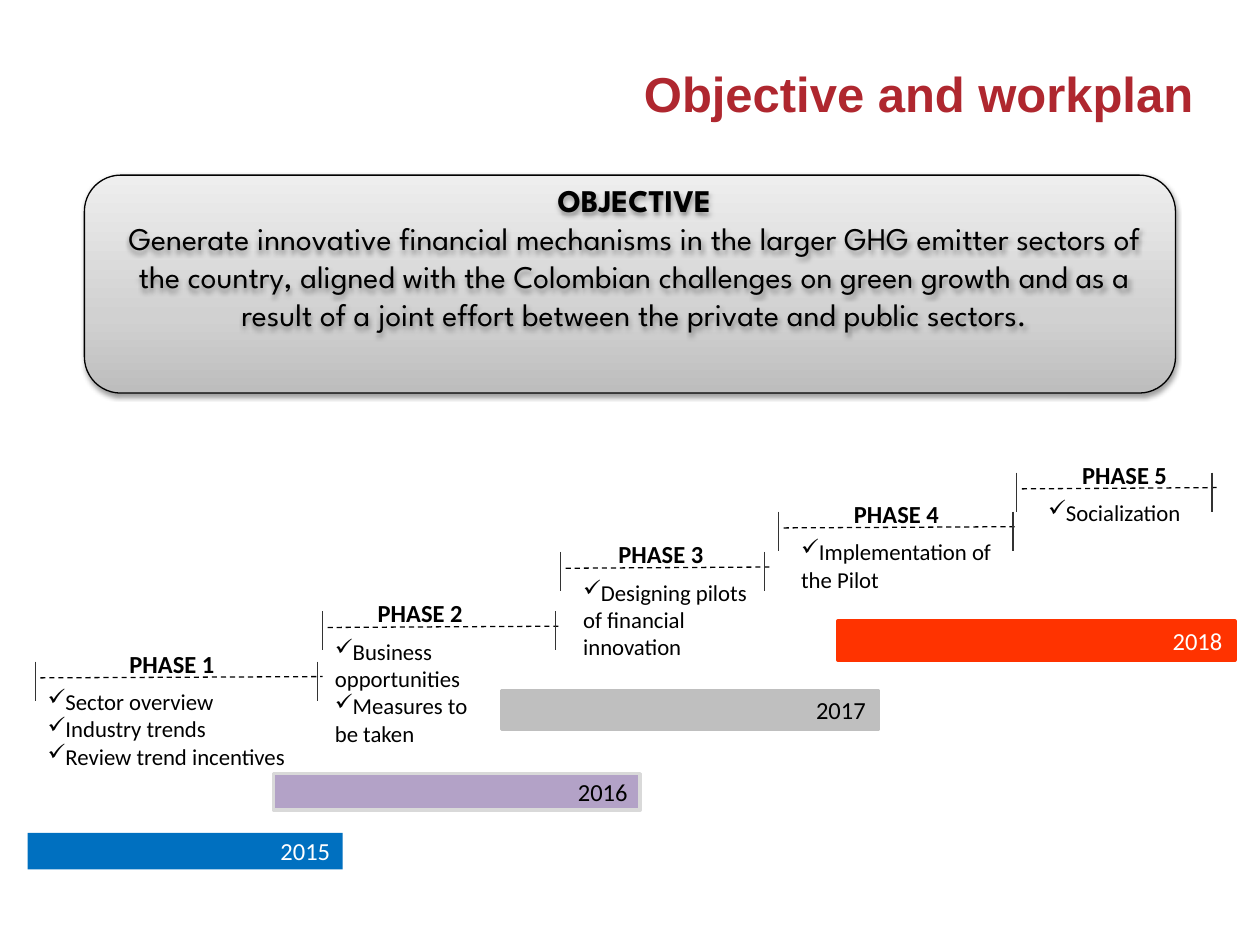
from copy import deepcopy
from typing import NamedTuple, Optional

from lxml import etree
from pptx import Presentation
from pptx.dml.color import RGBColor
from pptx.enum import dml, shapes, text
from pptx.oxml import ns
from pptx.util import Inches, Pt

BLACK = RGBColor(0, 0, 0)
WHITE = RGBColor(0xFF, 0xFF, 0xFF)
TITLE_RED = RGBColor(0xAF, 0x27, 0x2F)
TICK_GRAY = RGBColor(0x33, 0x33, 0x33)
BLUE = RGBColor(0x00, 0x70, 0xC0)
PURPLE = RGBColor(0xB3, 0xA2, 0xC7)
PALE_GRAY = RGBColor(0xD9, 0xD9, 0xD9)
GRAY = RGBColor(0xBF, 0xBF, 0xBF)
ORANGE = RGBColor(0xFF, 0x33, 0x00)
PANEL_STOPS = [
    (0, RGBColor(0xBD, 0xBD, 0xBD)),
    (0.35, RGBColor(0xD1, 0xD1, 0xD1)),
    (1, RGBColor(0xEE, 0xEE, 0xEE)),
]

LEFT, CENTER, RIGHT, JUSTIFY = (
    text.PP_ALIGN.LEFT, text.PP_ALIGN.CENTER, text.PP_ALIGN.RIGHT, text.PP_ALIGN.JUSTIFY)

OBJECTIVE = (
    "Generate innovative financial mechanisms in the larger GHG emitter sectors of "
    "the country, aligned with the Colombian challenges on green growth and as a "
    "result of a joint effort between the private and public sectors."
)


class YearBar(NamedTuple):
    year: str
    left: float
    top: float
    width: float
    height: float
    fill: RGBColor
    line: Optional[RGBColor]
    color: RGBColor


class Phase(NamedTuple):
    """A bracket from left to right, with its label above and its list below."""
    left: float
    right: float
    top: float
    label_left: float
    list_left: float
    list_width: float
    items: list[str]
    align: text.PP_ALIGN = LEFT


BARS = [
    YearBar("2015", 0.22, 6.61, 2.5, 0.29, BLUE, None, WHITE),
    YearBar("2017", 3.98, 5.48, 2.99, 0.31, GRAY, GRAY, BLACK),
    YearBar("2018", 6.65, 4.93, 3.15, 0.31, ORANGE, ORANGE, WHITE),
    YearBar("2016", 2.17, 6.14, 2.91, 0.29, PURPLE, PALE_GRAY, BLACK),
]
PHASES = [
    Phase(0.28, 2.52, 5.25, 0.88, 0.28, 2.12,
          ["Sector overview", "Industry trends", "Review trend incentives"], JUSTIFY),
    Phase(2.56, 4.41, 4.85, 2.85, 2.56, 1.97,
          ["Business opportunities", "Measures to\vbe taken"]),
    Phase(4.45, 6.07, 4.38, 4.76, 4.53, 1.65,
          ["Designing pilots of financial innovation"]),
    Phase(6.18, 8.04, 4.06, 6.63, 6.26, 1.81, ["Implementation of the Pilot"]),
    Phase(8.07, 9.62, 3.75, 8.44, 8.22, 1.31, ["Socialization"]),
]


def set_font(p, name: str, size: float, color: RGBColor, bold: bool = False) -> None:
    p.font.name = name
    p.font.size = Pt(size)
    p.font.bold = bold
    p.font.color.rgb = color


def add_shadow(sp) -> None:
    effects = etree.SubElement(sp._element.spPr, ns.qn("a:effectLst"))
    shadow = etree.SubElement(effects, ns.qn("a:outerShdw"), blurRad=str(Pt(3.1)),
                              dist=str(Pt(1.6)), dir="5400000", rotWithShape="0")
    color = etree.SubElement(shadow, ns.qn("a:srgbClr"), val="000000")
    etree.SubElement(color, ns.qn("a:alpha"), val="38000")


def add_text(parent, left: float, top: float, width: float, height: float,
             lines: list[str], align: text.PP_ALIGN, font: str, size: float,
             bold: bool = False, bullet: str = ""):
    sp = parent.add_textbox(Inches(left), Inches(top), Inches(width), Inches(height))
    tf = sp.text_frame
    tf.word_wrap = True
    for i, line in enumerate(lines):
        p = tf.add_paragraph() if i else tf.paragraphs[0]
        p.text = line
        p.alignment = align
        if bullet:
            etree.SubElement(p._p.get_or_add_pPr(), ns.qn("a:buChar"), char=bullet)
        set_font(p, font, size, BLACK, bold)
    return sp


def add_line(parent, x1: float, y1: float, x2: float, y2: float,
             color: RGBColor, dashed: bool = False) -> None:
    line = parent.add_connector(shapes.MSO_CONNECTOR.STRAIGHT,
                                Inches(x1), Inches(y1), Inches(x2), Inches(y2))
    line.line.width = Pt(0.75)
    line.line.color.rgb = color
    if dashed:
        line.line.dash_style = dml.MSO_LINE.DASH
    etree.SubElement(line._element.spPr, ns.qn("a:effectLst"))


def add_title(slide) -> None:
    title = slide.shapes.title
    title.left, title.top, title.width, title.height = map(Inches, (3.22, 0.45, 6.35, 0.57))
    tf = title.text_frame
    tf.vertical_anchor = text.MSO_ANCHOR.MIDDLE
    p = tf.paragraphs[0]
    p.text = "Objective and workplan"
    p.alignment = RIGHT
    set_font(p, "Arial", 28, TITLE_RED, bold=True)


def add_objective(slide) -> None:
    group = slide.shapes.add_group_shape().shapes
    panel = group.add_shape(shapes.MSO_SHAPE.ROUNDED_RECTANGLE,
                            Inches(0.67), Inches(1.39), Inches(8.66), Inches(1.73))
    panel.fill.gradient()
    panel.fill.gradient_angle = 90
    first = panel._element.spPr.find(".//" + ns.qn("a:gs"))
    first.addnext(deepcopy(first))
    for stop, (position, color) in zip(panel.fill.gradient_stops, PANEL_STOPS):
        stop.position = position
        stop.color.rgb = color
    panel.line.color.rgb = BLACK
    panel.line.width = Pt(0.75)
    add_shadow(panel)

    box = add_text(group, 0.89, 1.39, 8.29, 1.62, ["OBJECTIVE", OBJECTIVE],
                   CENTER, "League Spartan", 18)
    box.text_frame.paragraphs[0].font.bold = True
    add_shadow(box)


def add_year_bar(slide, bar: YearBar) -> None:
    sp = slide.shapes.add_shape(shapes.MSO_SHAPE.RECTANGLE, Inches(bar.left),
                                Inches(bar.top), Inches(bar.width), Inches(bar.height))
    sp.shadow.inherit = False
    sp.fill.solid()
    sp.fill.fore_color.rgb = bar.fill
    if bar.line is None:
        sp.line.fill.background()
    else:
        sp.line.color.rgb = bar.line
        sp.line.width = Pt(2)
    tf = sp.text_frame
    tf.vertical_anchor = text.MSO_ANCHOR.MIDDLE
    p = tf.paragraphs[0]
    p.text = bar.year
    p.alignment = RIGHT
    set_font(p, "Calibri", 14, bar.color)


def add_phase(slide, number: int, phase: Phase) -> None:
    bracket = slide.shapes.add_group_shape().shapes
    add_line(bracket, phase.left + 0.04, phase.top + 0.13,
             phase.right + 0.04, phase.top + 0.12, BLACK, dashed=True)
    for x in (phase.left, phase.right):
        add_line(bracket, x, phase.top, x, phase.top + 0.31, TICK_GRAY)
    add_text(slide.shapes, phase.label_left, phase.top - 0.15, 0.97, 0.34,
             [f"PHASE {number}"], CENTER, "Calibri", 14, bold=True)
    add_text(slide.shapes, phase.list_left, phase.top + 0.16, phase.list_width,
             0.1 + 0.22 * len(phase.items), phase.items, phase.align,
             "Calibri", 13, bullet="✓")


def main() -> None:
    prs = Presentation()
    prs.slide_width, prs.slide_height = Inches(10), Inches(7.5)
    slide = prs.slides.add_slide(prs.slide_layouts[5])
    add_title(slide)
    add_objective(slide)
    for bar in BARS:
        add_year_bar(slide, bar)
    for number, phase in enumerate(PHASES, start=1):
        add_phase(slide, number, phase)
    prs.save("out.pptx")


if __name__ == "__main__":
    main()
